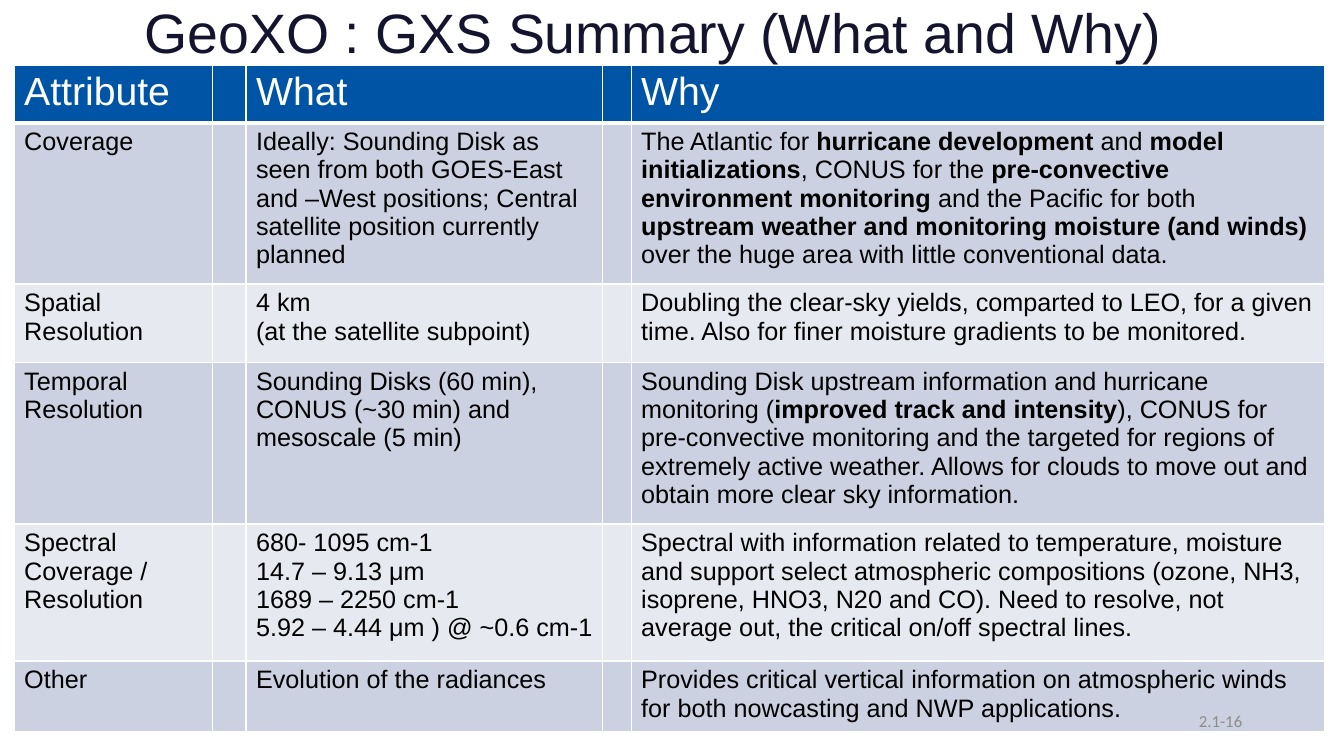
from dataclasses import dataclass

from lxml import etree
from pptx import Presentation
from pptx.dml.color import RGBColor
from pptx.enum.text import MSO_ANCHOR, PP_ALIGN
from pptx.oxml.ns import qn
from pptx.slide import Slide
from pptx.table import _Cell
from pptx.text.text import TextFrame, _Paragraph
from pptx.util import Emu, Pt

PX = 9144  # EMU in one px, at 100 px to the inch
LEFT, CENTER, RIGHT = PP_ALIGN.LEFT, PP_ALIGN.CENTER, PP_ALIGN.RIGHT
MIDDLE = MSO_ANCHOR.MIDDLE


@dataclass(frozen=True)
class TextStyle:
    size: float
    color: str
    font: str = "Arial"
    align: PP_ALIGN = LEFT
    spacing: float = 1.0


@dataclass(frozen=True)
class Theme:
    title: TextStyle = TextStyle(39.6, "14142F", align=CENTER, spacing=0.9)
    header: TextStyle = TextStyle(28, "FFFFFF")
    body: TextStyle = TextStyle(18, "000000")
    number: TextStyle = TextStyle(12, "8C8C8C", "Calibri", RIGHT)
    header_fill: str = "0054A5"
    bands: tuple[str, str] = ("CCD1E1", "E7E9F0")
    border: str = "FFFFFF"


@dataclass(frozen=True)
class Box:
    left: int
    top: int
    width: int
    height: int

    def emu(self) -> list[Emu]:
        return [Emu(v * PX) for v in (self.left, self.top, self.width, self.height)]


@dataclass(frozen=True)
class Row:
    height: int
    attribute: str
    what: str
    why: str


THEME = Theme()
TITLE_BOX = Box(93, -20, 1110, 111)
TABLE_BOX = Box(14, 65, 1300, 614)
NUMBER_BOX = Box(942, 695, 300, 40)
COLUMNS = (197, 33, 354, 28, 688)

# Double asterisks enclose bold text; a newline starts a paragraph.
ROWS = (
    Row(51, "Attribute", "What", "Why"),
    Row(126, "Coverage",
        "Ideally: Sounding Disk as seen from both GOES-East and –West positions; "
        "Central satellite position currently planned",
        "The Atlantic for **hurricane development **and **model initializations**, "
        "CONUS for the **pre-convective environment monitoring** and the Pacific for "
        "both **upstream weather and monitoring moisture (and winds) **over the huge "
        "area with little conventional data."),
    Row(78, "Spatial Resolution",
        "4 km\n(at the satellite subpoint)",
        "Doubling the clear-sky yields, comparted to LEO, for a given time. Also for "
        "finer moisture gradients to be monitored."),
    Row(155, "Temporal Resolution",
        "Sounding Disks (60 min), CONUS (~30 min) and mesoscale (5 min)",
        "Sounding Disk upstream information and hurricane monitoring (**improved track "
        "and intensity**), CONUS for pre-convective monitoring and the targeted for "
        "regions of extremely active weather. Allows for clouds to move out and obtain "
        "more clear sky information."),
    Row(136, "Spectral Coverage / Resolution",
        "680‐ 1095 cm‐1\n14.7 – 9.13 μm\n1689 – 2250 cm‐1\n"
        "5.92 – 4.44 μm ) @ ~0.6 cm-1",
        "Spectral with information related to temperature, moisture and support select "
        "atmospheric compositions (ozone, NH3, isoprene, HNO3, N20 and CO). Need to "
        "resolve, not average out, the critical on/off spectral lines."),
    Row(68, "Other", "Evolution of the radiances",
        "Provides critical vertical information on atmospheric winds for both "
        "nowcasting and NWP applications."),
)


def style_paragraph(p: _Paragraph, style: TextStyle) -> None:
    p.alignment = style.align
    p.line_spacing = style.spacing
    p.font.name = style.font
    p.font.size = Pt(style.size)
    p.font.color.rgb = RGBColor.from_string(style.color)


def write_text(tf: TextFrame, text: str, style: TextStyle) -> None:
    """Write paragraphs, making every second part between asterisks bold."""
    for i, line in enumerate(text.split("\n")):
        p = tf.add_paragraph() if i else tf.paragraphs[0]
        style_paragraph(p, style)
        for j, part in enumerate(line.split("**")):
            if part:
                r = p.add_run()
                r.text = part
                r.font.bold = j % 2 == 1


def add_label(slide: Slide, box: Box, text: str, style: TextStyle) -> None:
    tf = slide.shapes.add_textbox(*box.emu()).text_frame
    tf.word_wrap = True
    tf.vertical_anchor = MIDDLE
    write_text(tf, text, style)


def set_borders(cell: _Cell, bottom: float) -> None:
    """Draw 1 pt borders, with a bottom border of the given points."""
    tc_pr = cell._tc.get_or_add_tcPr()
    widths = {"a:lnL": 1, "a:lnR": 1, "a:lnT": 1, "a:lnB": bottom}
    for i, (tag, width) in enumerate(widths.items()):
        ln = etree.Element(qn(tag), w=str(Pt(width)))
        fill = etree.SubElement(ln, qn("a:solidFill"))
        etree.SubElement(fill, qn("a:srgbClr"), val=THEME.border)
        tc_pr.insert(i, ln)


def add_summary_table(slide: Slide) -> None:
    table = slide.shapes.add_table(len(ROWS), len(COLUMNS), *TABLE_BOX.emu()).table
    table.first_row = table.horz_banding = False
    for column, width in zip(table.columns, COLUMNS):
        column.width = Emu(width * PX)
    for i, row in enumerate(ROWS):
        table.rows[i].height = Emu(row.height * PX)
        style = THEME.body if i else THEME.header
        color = THEME.bands[(i - 1) % 2] if i else THEME.header_fill
        for j, text in enumerate((row.attribute, "", row.what, "", row.why)):
            cell = table.cell(i, j)
            cell.fill.solid()
            cell.fill.fore_color.rgb = RGBColor.from_string(color)
            set_borders(cell, bottom=1 if i else 3)
            if text:
                write_text(cell.text_frame, text, style)


def main() -> None:
    prs = Presentation()
    prs.slide_width, prs.slide_height = Emu(1333 * PX), Emu(750 * PX)
    slide = prs.slides.add_slide(prs.slide_layouts[6])
    add_label(slide, TITLE_BOX, "GeoXO : GXS Summary (What and Why)", THEME.title)
    add_summary_table(slide)
    add_label(slide, NUMBER_BOX, "2.1-16", THEME.number)
    prs.save("out.pptx")


if __name__ == "__main__":
    main()
